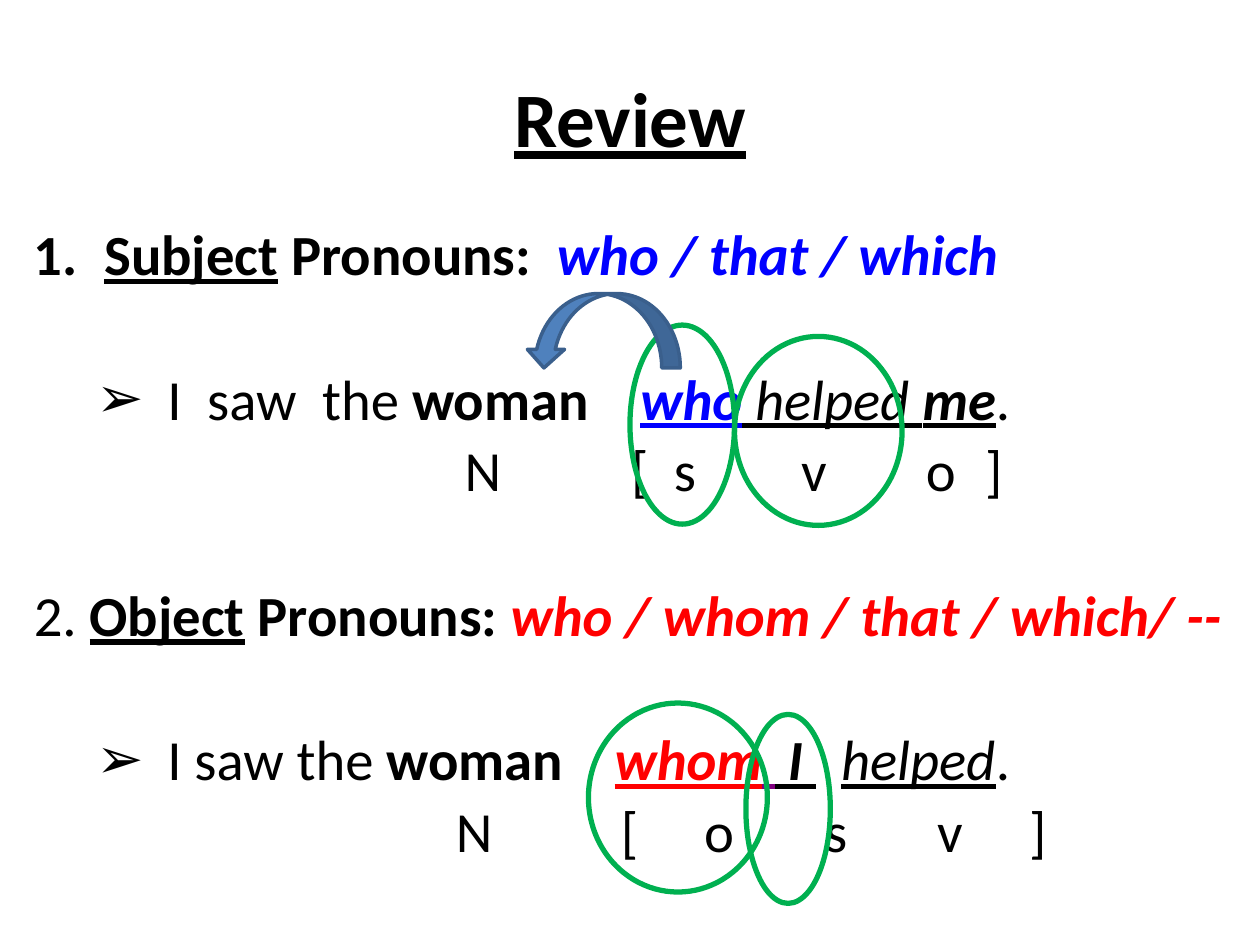
from lxml.etree import SubElement
from pptx import Presentation
from pptx.dml.color import RGBColor
from pptx.enum.shapes import MSO_SHAPE as Shape
from pptx.enum.text import MSO_ANCHOR as Anchor, PP_ALIGN as Align
from pptx.oxml.ns import qn
from pptx.util import Inches, Pt

BLACK = RGBColor(0, 0, 0)
BLUE = RGBColor(0, 0, 255)
RED = RGBColor(255, 0, 0)
PURPLE = RGBColor(128, 0, 128)
GREEN = RGBColor(0, 176, 80)
STEEL = RGBColor(79, 129, 189)
NAVY = RGBColor(58, 95, 140)
FONT, SIZE = "Calibri", 32.4
NEAR, FAR = 6, 47.5  # points before a line: next to the last, or one line apart

# A run: text, style letters (b, i, u), colour, extra width of its space in points
SUBJECT = [("Subject", "bu", BLACK, 0), (" Pronouns:  ", "b", BLACK, 0),
           ("who / that / which", "bi", BLUE, 0)]
WHO = [("I  saw  the ", "", BLACK, 0), ("woman", "b", BLACK, 0), (" ", "b", BLACK, 22),
       ("who", "biu", BLUE, 0), (" helped ", "iu", BLACK, 0),
       ("me", "biu", BLACK, 0), (".", "", BLACK, 0)]
OBJECT = [("2. ", "", BLACK, 0), ("Object", "bu", BLACK, 0), (" Pronouns: ", "b", BLACK, 0),
          ("who / whom / that / which/ --", "bi", RED, 0)]
WHOM = [("I saw the ", "", BLACK, 0), ("woman", "b", BLACK, 0), (" ", "b", BLACK, 22),
        ("whom", "biu", RED, 0), (" ", "biu", PURPLE, 0), (" ", "iu", BLACK, 0),
        ("I", "biu", BLACK, 0), (" ", "iu", BLACK, 14.6), ("helped", "iu", BLACK, 0),
        (".", "", BLACK, 0)]
# Labels below the sentences, with their tab stops in inches
WHO_TAGS = [("N", 3.42), ("[", 4.74), ("s", 5.08), ("v", 6.09), ("o", 7.08), ("]", 7.55)]
WHOM_TAGS = [("N", 3.35), ("[", 4.66), ("o", 5.32), ("s", 6.28), ("v", 7.17), ("]", 7.9)]

# Left, top, width, height
RINGS = [(4.67, 5.58, 1.42, 1.5), (5.83, 2.67, 1.33, 1.5),
         (5, 2.58, 0.83, 1.58), (5.92, 5.67, 0.67, 1.5)]
ARROW = (4.17, 2.33, 1.23, 0.59)


def add_run(para, text, style="", color=BLACK, gap=0, size=SIZE):
    run = para.add_run()
    run.text = text
    font = run.font
    font.name, font.size, font.color.rgb = FONT, Pt(size), color
    font.bold, font.italic, font.underline = (c in style for c in "biu")
    if gap:
        run._r.get_or_add_rPr().set("spc", str(round(gap * 100)))


def add_box(slide, box):
    frame = slide.shapes.add_textbox(*map(Inches, box)).text_frame
    frame.word_wrap = True
    return frame


def add_line(frame, before, runs):
    para = frame.paragraphs[0] if not frame.paragraphs[0].runs else frame.add_paragraph()
    para.line_spacing = 0.9
    para.space_before = Pt(before)
    for run in runs:
        add_run(para, *run)
    return para._p.get_or_add_pPr()


def hang(props, left, first, tag, **attrs):
    """Give a line a bullet or number with a hanging indent."""
    props.set("marL", str(Inches(left)))
    props.set("indent", str(Inches(first)))
    if tag == "a:buChar":
        SubElement(props, qn("a:buFont"), typeface="Arial")
    SubElement(props, qn(tag), **attrs)


def add_tags(frame, tags):
    text = "".join("\t" + tag for tag, _ in tags)
    stops = SubElement(add_line(frame, NEAR, [(text,)]), qn("a:tabLst"))
    for _, pos in tags:
        SubElement(stops, qn("a:tab"), pos=str(Inches(pos)), algn="l")


def add_figure(slide, kind, box, line, width):
    shape = slide.shapes.add_shape(kind, *map(Inches, box))
    shape.shadow.inherit = False
    shape.line.color.rgb, shape.line.width = line, Pt(width)
    return shape


def main():
    deck = Presentation()
    deck.slide_width, deck.slide_height = Inches(10), Inches(7.5)
    slide = deck.slides.add_slide(deck.slide_layouts[6])

    title = add_box(slide, (0.5, 0.3, 9, 1.25))
    title.vertical_anchor = Anchor.MIDDLE
    title.paragraphs[0].alignment = Align.CENTER
    add_run(title.paragraphs[0], "Review", "bu", size=44)

    body = add_box(slide, (0.17, 1.75, 9.67, 5.58))
    head = add_line(body, 0, SUBJECT)
    hang(head, 0.56, -0.56, "a:buAutoNum", type="arabicPeriod")
    for sentence, tags in ((WHO, WHO_TAGS), (WHOM, WHOM_TAGS)):
        if sentence is WHOM:
            add_line(body, FAR, OBJECT)
        hang(add_line(body, FAR, sentence), 1.06, -0.56, "a:buChar", char="➢")
        add_tags(body, tags)

    for box in RINGS:
        add_figure(slide, Shape.OVAL, box, GREEN, 3).fill.background()
    arrow = add_figure(slide, Shape.CURVED_DOWN_ARROW, ARROW, NAVY, 2)
    arrow.fill.solid()
    arrow.fill.fore_color.rgb = STEEL
    arrow._element.spPr.find(qn("a:xfrm")).set("flipH", "1")

    deck.save("out.pptx")


if __name__ == "__main__":
    main()
